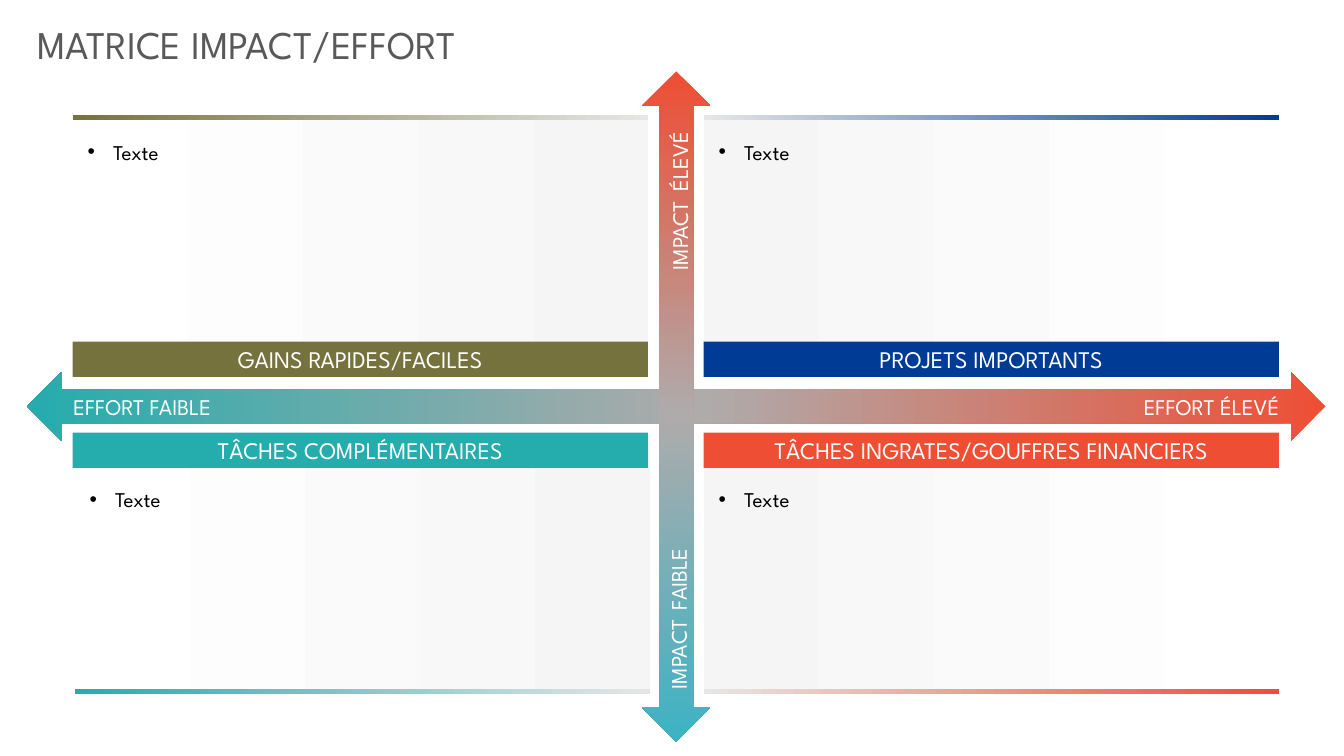
"""Build the impact/effort matrix slide."""
from copy import deepcopy
from lxml import etree
from pptx import Presentation
from pptx.dml import color
from pptx.enum import shapes, text
from pptx.oxml import ns
from pptx.util import Cm, Pt

FONT = "League Spartan"
hue = color.RGBColor.from_string
KIND = shapes.MSO_SHAPE
ALIGN = text.PP_ALIGN
ANCHOR = text.MSO_ANCHOR


def paint(shape, tones, angle=0, mid=0.5):
    """Fill a shape with one tone or a gradient of two or three."""
    if len(tones) == 1:
        shape.fill.solid()
        shape.fill.fore_color.rgb = hue(tones[0])
    else:
        shape.fill.gradient()
        shape.fill.gradient_angle = angle
        if len(tones) == 3:
            stops = next(shape._element.iter(ns.qn("a:gsLst")))
            stops.insert(1, deepcopy(stops[0]))
            shape.fill.gradient_stops[1].position = mid
        for stop, tone in zip(shape.fill.gradient_stops, tones):
            stop.color.rgb = hue(tone)
    shape.line.fill.background()
    shape.shadow.inherit = False


def write(shape, words, size, tone, align=ALIGN.LEFT, anchor=ANCHOR.MIDDLE,
          pads=(0, 0, 0, 0)):
    """Put one styled paragraph in a shape and return it."""
    frame = shape.text_frame
    frame.word_wrap = True
    frame.auto_size = text.MSO_AUTO_SIZE.NONE
    frame.vertical_anchor = anchor
    (frame.margin_left, frame.margin_top,
     frame.margin_right, frame.margin_bottom) = [Cm(p) for p in pads]
    para = frame.paragraphs[0]
    para.alignment = align
    for word in words:
        para.add_run().text = word
    font = para.font
    font.name, font.size, font.bold = FONT, Pt(size), False
    font.color.rgb = hue(tone)
    return para


deck = Presentation()
deck.slide_width, deck.slide_height = Cm(33.87), Cm(19.05)
slide = deck.slides.add_slide(deck.slide_layouts[4])
items = slide.shapes

title = items.title
title.left, title.top, title.width, title.height = Cm(0.69), Cm(0.38), Cm(15.5), Cm(1.45)
write(title, ["MATRICE IMPACT/EFFORT"], 28, "595959", anchor=ANCHOR.TOP,
      pads=(0.25, 0.13, 0.25, 0.13))

WIDE, HIGH, BAR, RULE = 14.5, 6.6, 0.89, 0.13
LEFT, RIGHT, UPPER, LOWER = 1.83, 17.73, 2.9, 10.9
quads = [
    (LEFT, UPPER, "GAINS RAPIDES/FACILES", "76723E"),
    (RIGHT, UPPER, "PROJETS IMPORTANTS", "003C95"),
    (LEFT, LOWER, "TÂCHES COMPLÉMENTAIRES", "25ACAD"),
    (RIGHT, LOWER, "TÂCHES INGRATES/GOUFFRES FINANCIERS", "EE4E34"),
]
for spot, (x, y, name, tone) in enumerate(quads, 1):
    top, step = y == UPPER, 1 if x == LEFT else -1
    edge = x + 0.05 if (x, y) == (LEFT, LOWER) else x

    panel = slide.placeholders[spot]
    panel.left, panel.top, panel.width, panel.height = Cm(edge), Cm(y), Cm(WIDE), Cm(HIGH)
    paint(panel, ["FFFFFF", "F6F5F5"][::step])
    pads = (0.38, 0.51, 0.25, 0.76) if top else (0.38, 1.27, 0.25, 0.13)
    para = write(panel, ["Texte"], 15, "000000", anchor=ANCHOR.TOP, pads=pads)
    para.line_spacing, para.space_before, para.space_after = 1.15, Pt(0), Pt(8)
    props = para._p.get_or_add_pPr()
    props.set("marL", str(Cm(0.64)))
    props.set("indent", str(Cm(-0.64)))
    dot = etree.Element(ns.qn("a:buChar"), char="•")
    props.insert(len(props) - 1, dot)

    bar = items.add_shape(KIND.RECTANGLE, Cm(x), Cm(y + HIGH - BAR if top else y),
                          Cm(WIDE), Cm(BAR))
    paint(bar, [tone])
    write(bar, [name], 17, "FFFFFF", ALIGN.CENTER)

    rule = items.add_shape(KIND.RECTANGLE, Cm(edge), Cm(y if top else y + HIGH - RULE),
                           Cm(WIDE), Cm(RULE))
    paint(rule, [tone, "E7E6E6"][::step])

arrows = [
    (-6.12, 32.72, 90, ["ED4F35", "AFABAB", "25ACAD"], 0.48),
    (1.8, 16.89, 0, ["EE4E34", "AFABAB", "3CB3C4"], 0.51),
]
for y, size, turn, tones, mid in arrows:
    arrow = items.add_shape(KIND.UP_DOWN_ARROW, Cm(16.18), Cm(y), Cm(1.73), Cm(size))
    arrow.rotation = turn
    arrow.adjustments[0], arrow.adjustments[1] = 0.463, 0.5
    paint(arrow, tones, 270, mid)

labels = [
    (1.85, 9.86, 4.06, 0.76, 0, ["EFFORT FAIBLE"], ALIGN.LEFT),
    (27.41, 9.86, 4.83, 0.76, 0, ["EFFORT ÉLEVÉ"], ALIGN.RIGHT),
    (14.17, 14.1, 5.49, 1.04, 270, ["IMPACT", " ", "FAIBLE"], ALIGN.LEFT),
    (14.66, 4.55, 4.57, 1.04, 270, ["IMPACT", " ", "ÉLEVÉ"], ALIGN.CENTER),
]
for x, y, wide, high, turn, words, align in labels:
    label = items.add_textbox(Cm(x), Cm(y), Cm(wide), Cm(high))
    label.rotation = turn
    para = write(label, words, 16, "FFFFFF", align)
    for gap in para.runs[1:2]:
        gap.font.size = Pt(28)

deck.save("out.pptx")
